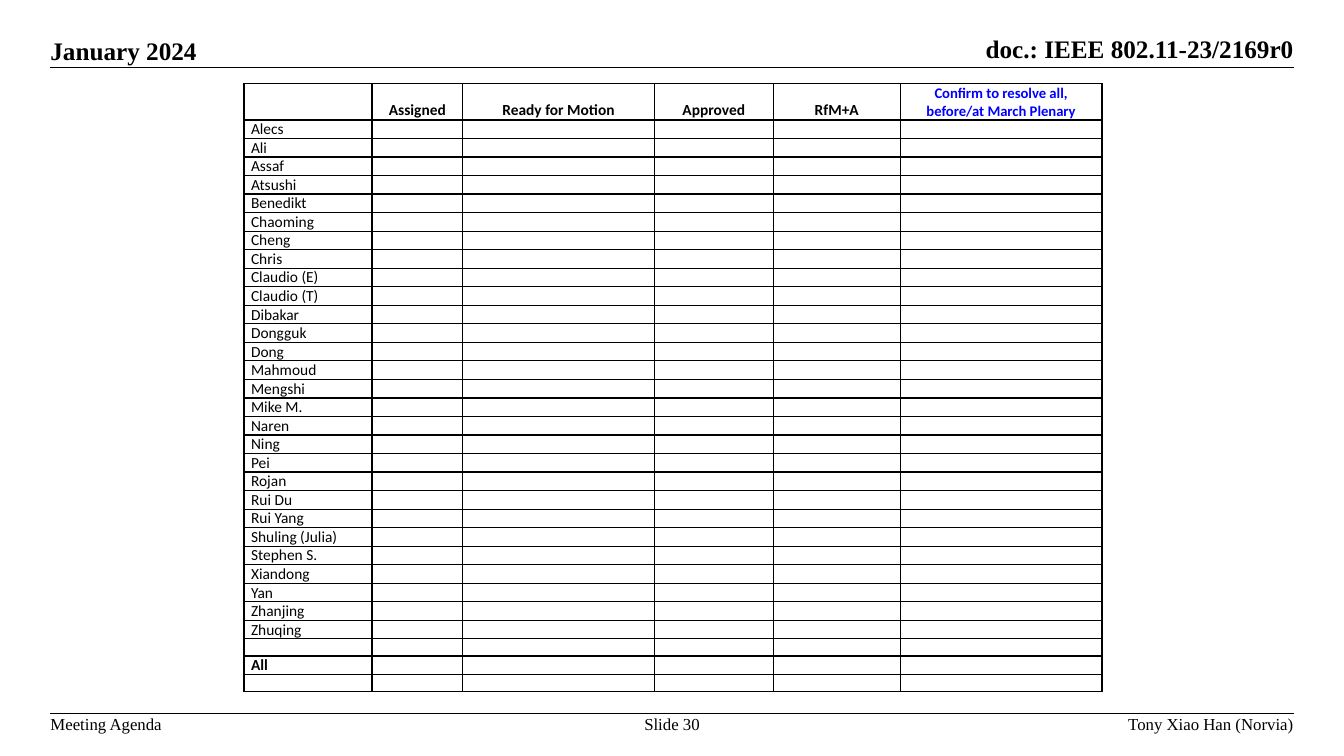
from lxml import etree
from pptx import Presentation
from pptx.dml.color import RGBColor
from pptx.enum import shapes, text
from pptx.oxml import ns
from pptx.util import Inches, Pt

BLACK = RGBColor(0, 0, 0)
BLUE = RGBColor(0, 0, 255)
SERIF, SANS = "Times New Roman", "Calibri"
LEFT, MID, RIGHT = text.PP_ALIGN.LEFT, text.PP_ALIGN.CENTER, text.PP_ALIGN.RIGHT
TOP, BASE = text.MSO_ANCHOR.TOP, text.MSO_ANCHOR.BOTTOM

# Content: words, box, size, bold, alignment, anchor
LABELS = [
    ("doc.: IEEE 802.11-23/2169r0", (9.24, 0.33, 3.59, 0.3), 18, True, RIGHT, BASE),
    ("January 2024", (0.5, 0.35, 1.47, 0.3), 18, True, LEFT, BASE),
    ("Meeting Agenda", (0.5, 7.08, 1.12, 0.2), 12, False, LEFT, TOP),
    ("Slide 30", (6.37, 7.08, 0.59, 0.2), 12, False, MID, TOP),
    ("Tony Xiao Han (Norvia)", (8.82, 7.08, 4.01, 0.2), 12, False, RIGHT, TOP),
]
RULES = [0.67, 7.08]
HEADS = ["", "Assigned", "Ready for Motion", "Approved", "RfM+A",
         "Confirm to resolve all, before/at March Plenary"]
NAMES = ["Alecs", "Ali", "Assaf", "Atsushi", "Benedikt", "Chaoming", "Cheng",
         "Chris", "Claudio (E)", "Claudio (T)", "Dibakar", "Dongguk", "Dong",
         "Mahmoud", "Mengshi", "Mike M.", "Naren", "Ning", "Pei", "Rojan",
         "Rui Du", "Rui Yang", "Shuling (Julia)", "Stephen S.", "Xiandong",
         "Yan", "Zhanjing", "Zhuqing", "", "All", ""]
WIDTHS = [1.27, 0.9, 1.9, 1.18, 1.26, 2]
HEAD_H, NAME_H, BLANK_H = 0.36, 0.18, 0.17


def write(para, words, size, face, bold=False, color=BLACK, align=LEFT):
    para.alignment = align
    run = para.add_run()
    run.text = words
    font = run.font
    font.size, font.name, font.bold = Pt(size), face, bold
    font.color.rgb = color


def border(cell):
    props = cell._tc.get_or_add_tcPr()
    for i, side in enumerate(("lnL", "lnR", "lnT", "lnB")):
        line = etree.Element(ns.qn("a:" + side), w=str(Pt(1)))
        fill = etree.SubElement(line, ns.qn("a:solidFill"))
        etree.SubElement(fill, ns.qn("a:srgbClr"), val=str(BLACK))
        props.insert(i, line)


deck = Presentation()
deck.slide_width, deck.slide_height = Inches(13.33), Inches(7.5)
slide = deck.slides.add_slide(deck.slide_layouts[6])

# Header and footer rules
for y in RULES:
    rule = slide.shapes.add_connector(shapes.MSO_CONNECTOR.STRAIGHT, Inches(0.5),
                                      Inches(y), Inches(12.83), Inches(y))
    rule.line.color.rgb = BLACK
    rule.line.width = Pt(1)
    etree.SubElement(rule._element.spPr, ns.qn("a:effectLst"))

# Header and footer text
for words, box, size, bold, align, anchor in LABELS:
    frame = slide.shapes.add_textbox(*map(Inches, box)).text_frame
    frame.margin_left = frame.margin_right = 0
    frame.margin_top = frame.margin_bottom = 0
    frame.word_wrap = False
    frame.vertical_anchor = anchor
    write(frame.paragraphs[0], words, size, SERIF, bold, align=align)

# Assignment table
rows = [HEADS] + [[name] + [""] * (len(HEADS) - 1) for name in NAMES]
heights = [HEAD_H] + [NAME_H if name else BLANK_H for name in NAMES]
holder = slide.shapes.add_table(len(rows), len(HEADS), Inches(2.42), Inches(0.83),
                                Inches(sum(WIDTHS)), Inches(sum(heights)))
table = holder.table
table.first_row = table.horz_banding = False
for col, width in zip(table.columns, WIDTHS):
    col.width = Inches(width)

for r, (row, height) in enumerate(zip(rows, heights)):
    table.rows[r].height = Inches(height)
    for c, words in enumerate(row):
        cell = table.cell(r, c)
        cell.fill.background()
        cell.margin_left = cell.margin_right = Inches(0.07)
        cell.margin_top = cell.margin_bottom = 0
        cell.vertical_anchor = BASE
        border(cell)
        para = cell.text_frame.paragraphs[0]
        if words:
            last = c == len(HEADS) - 1
            write(para, words, 10.5 if last else 11, SANS, r == 0 or words == "All",
                  BLUE if last else BLACK, LEFT if r else MID)
        else:
            # Small type keeps an empty cell from stretching its row
            etree.SubElement(para._p, ns.qn("a:endParaRPr"), sz="1000")

deck.save("out.pptx")
